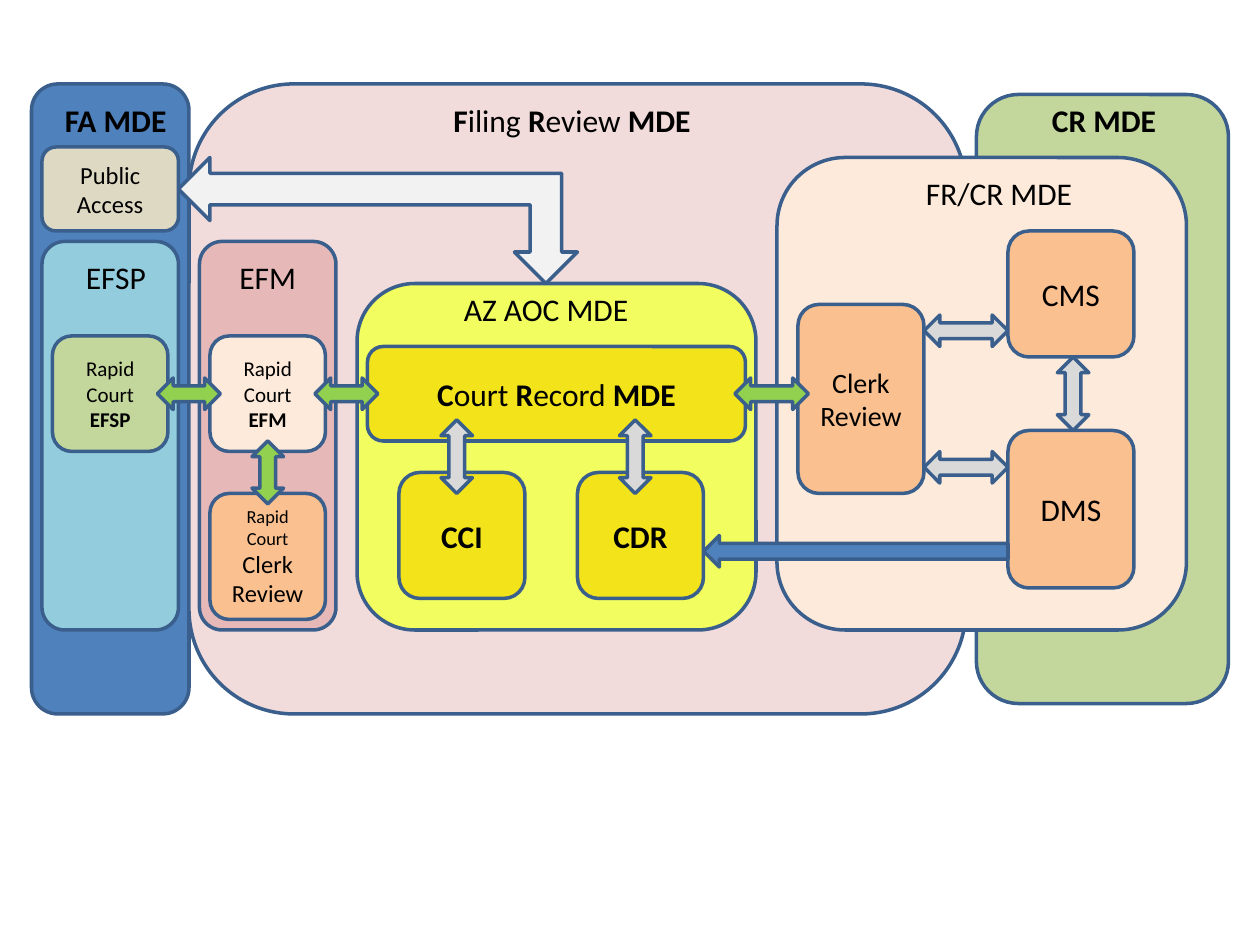
from dataclasses import dataclass
from typing import NamedTuple

from pptx import Presentation
from pptx.dml.color import RGBColor
from pptx.enum.shapes import MSO_SHAPE as Preset
from pptx.enum.text import MSO_ANCHOR as Anchor, MSO_AUTO_SIZE as AutoSize, PP_ALIGN as Align
from pptx.util import Cm, Pt

GRID = 2.54 / 12  # centimetres in one grid step; the slide is 120 by 90 steps
LABEL_HEIGHT = 4.8


@dataclass(frozen=True)
class Theme:
    font: str = "Calibri"
    text: str = "000000"
    line: str = "3A5F8C"
    line_width: float = 2
    blue: str = "4F81BD"
    aqua: str = "93CDDD"
    green: str = "C3D69B"
    pink: str = "F2DCDB"
    rose: str = "E6B9B8"
    cream: str = "FDEADA"
    orange: str = "FAC090"
    lemon: str = "F2FD5F"
    yellow: str = "F2E31A"
    tan: str = "DDD9C3"
    vendor_link: str = "92D050"
    system_link: str = "D9D9D9"
    public_link: str = "F2F2F2"
    heading: float = 18
    large: float = 16
    medium: float = 14
    small: float = 12
    tiny: float = 10.5


THEME = Theme()


class Box(NamedTuple):
    """A rectangle in grid steps."""
    left: float
    top: float
    width: float
    height: float

    def inside(self, left, top, width, height):
        return Box(self.left + left, self.top + top, width, height)

    def lengths(self):
        return [Cm(steps * GRID) for steps in self]


def write_text(frame, text, size=THEME.heading, align=Align.LEFT,
               emphasis_size=None, emphasis_bold=True):
    """Write one paragraph; parts between ** marks get the emphasis format."""
    paragraph = frame.paragraphs[0]
    paragraph.alignment = align
    for index, part in enumerate(text.split("**")):
        if not part:
            continue
        emphasized = index % 2 == 1
        run = paragraph.add_run()
        run.text = part
        run.font.name = THEME.font
        run.font.size = Pt(emphasis_size if emphasized and emphasis_size else size)
        run.font.bold = emphasized and emphasis_bold
        run.font.color.rgb = RGBColor.from_string(THEME.text)


def add_preset(slide, preset, box, fill, rotation=0):
    shape = slide.shapes.add_shape(preset, *box.lengths())
    shape.shadow.inherit = False
    shape.fill.solid()
    shape.fill.fore_color.rgb = RGBColor.from_string(fill)
    shape.line.color.rgb = RGBColor.from_string(THEME.line)
    shape.line.width = Pt(THEME.line_width)
    shape.rotation = rotation
    return shape


def add_block(slide, box, fill, text="", **text_format):
    """Add a rounded block with centred text."""
    shape = add_preset(slide, Preset.ROUNDED_RECTANGLE, box, fill)
    shape.text_frame.vertical_anchor = Anchor.MIDDLE
    write_text(shape.text_frame, text, align=Align.CENTER, **text_format)


def add_label(slide, box, text, align=Align.LEFT):
    frame = slide.shapes.add_textbox(*box.lengths()).text_frame
    frame.word_wrap = False
    frame.auto_size = AutoSize.SHAPE_TO_FIT_TEXT
    write_text(frame, text, align=align)


def add_double_arrow(slide, box, fill):
    """Point the two heads along the longer side of the box."""
    wide = box.width > box.height
    add_preset(slide, Preset.LEFT_RIGHT_ARROW if wide else Preset.UP_DOWN_ARROW, box, fill)


def draw_filing_assembly(slide, box):
    add_block(slide, box, THEME.blue)
    add_label(slide, box.inside(2, 1, 13, LABEL_HEIGHT), "**FA MDE**")
    add_block(slide, box.inside(1, 6, 13, 8), THEME.tan, "Public Access", size=THEME.medium)
    provider = box.inside(1, 15, 13, 37)
    add_block(slide, provider, THEME.aqua)
    add_label(slide, provider.inside(3, 1, 8.2, LABEL_HEIGHT), "EFSP")
    add_block(slide, provider.inside(1, 9, 11, 11), THEME.green,
              "Rapid Court **EFSP**", size=THEME.small)


def draw_court_records(slide, box):
    add_block(slide, box, THEME.green)
    add_label(slide, box.inside(6, 0, 12.5, LABEL_HEIGHT), "**CR MDE**")


def draw_filing_review(slide, box):
    add_block(slide, box, THEME.pink)
    add_label(slide, box.inside(24, 1, 25.3, LABEL_HEIGHT), "**F**iling **R**eview **MDE**")
    draw_filing_manager(slide, box.inside(1, 15, 13, 37))
    draw_court_office(slide, box.inside(16, 19, 38, 33))


def draw_filing_manager(slide, box):
    add_block(slide, box, THEME.rose)
    add_label(slide, box.inside(1.5, 1, 10, LABEL_HEIGHT), "EFM", align=Align.CENTER)
    add_block(slide, box.inside(1, 9, 11, 11), THEME.cream,
              "Rapid Court **EFM**", size=THEME.small)
    add_block(slide, box.inside(1, 24, 11, 12), THEME.orange, "Rapid Court **Clerk Review**",
              size=THEME.tiny, emphasis_size=THEME.medium, emphasis_bold=False)
    add_double_arrow(slide, box.inside(5, 19, 3, 6), THEME.vendor_link)


def draw_court_office(slide, box):
    add_block(slide, box, THEME.lemon)
    add_label(slide, box.inside(9, 0, 18.2, LABEL_HEIGHT), "AZ AOC MDE")
    add_block(slide, box.inside(1, 6, 36, 9), THEME.yellow, "**C**ourt **R**ecord **MDE**")
    for left, name in ((4, "CCI"), (21, "CDR")):
        add_block(slide, box.inside(left, 18, 12, 12), THEME.yellow, f"**{name}**")
        add_double_arrow(slide, box.inside(left + 4, 13, 3, 7), THEME.system_link)


def draw_shared_systems(slide, box):
    add_block(slide, box, THEME.cream)
    add_label(slide, box.inside(13, 1, 16.6, LABEL_HEIGHT), "FR/CR MDE")
    add_block(slide, box.inside(2, 14, 12, 18), THEME.orange, "Clerk Review", size=THEME.large)
    for top, height, name in ((7, 12, "CMS"), (26, 15, "DMS")):
        add_block(slide, box.inside(22, top, 12, height), THEME.orange, name)
    for top in (15, 28):
        add_double_arrow(slide, box.inside(14, top, 8, 3), THEME.system_link)
    add_double_arrow(slide, box.inside(26.7, 19, 3, 7), THEME.system_link)


def draw_region_links(slide, box):
    for left, width in ((15, 6), (30, 6), (70, 7)):
        add_double_arrow(slide, box.inside(left, 36, width, 3), THEME.vendor_link)
    add_preset(slide, Preset.LEFT_UP_ARROW, box.inside(30, 2, 12, 38),
               THEME.public_link, rotation=270)
    add_preset(slide, Preset.RIGHT_ARROW, box.inside(67, 51, 29, 3), THEME.blue, rotation=180)


def main():
    presentation = Presentation()
    canvas = Box(0, 0, 120, 90)
    presentation.slide_width, presentation.slide_height = canvas.lengths()[2:]
    slide = presentation.slides.add_slide(presentation.slide_layouts.get_by_name("Blank"))
    draw_filing_assembly(slide, canvas.inside(3, 8, 15, 60))
    draw_court_records(slide, canvas.inside(93, 9, 24, 58))
    draw_filing_review(slide, canvas.inside(18, 8, 74, 60))
    draw_shared_systems(slide, canvas.inside(74, 15, 39, 45))
    draw_region_links(slide, canvas)
    presentation.save("out.pptx")


if __name__ == "__main__":
    main()
